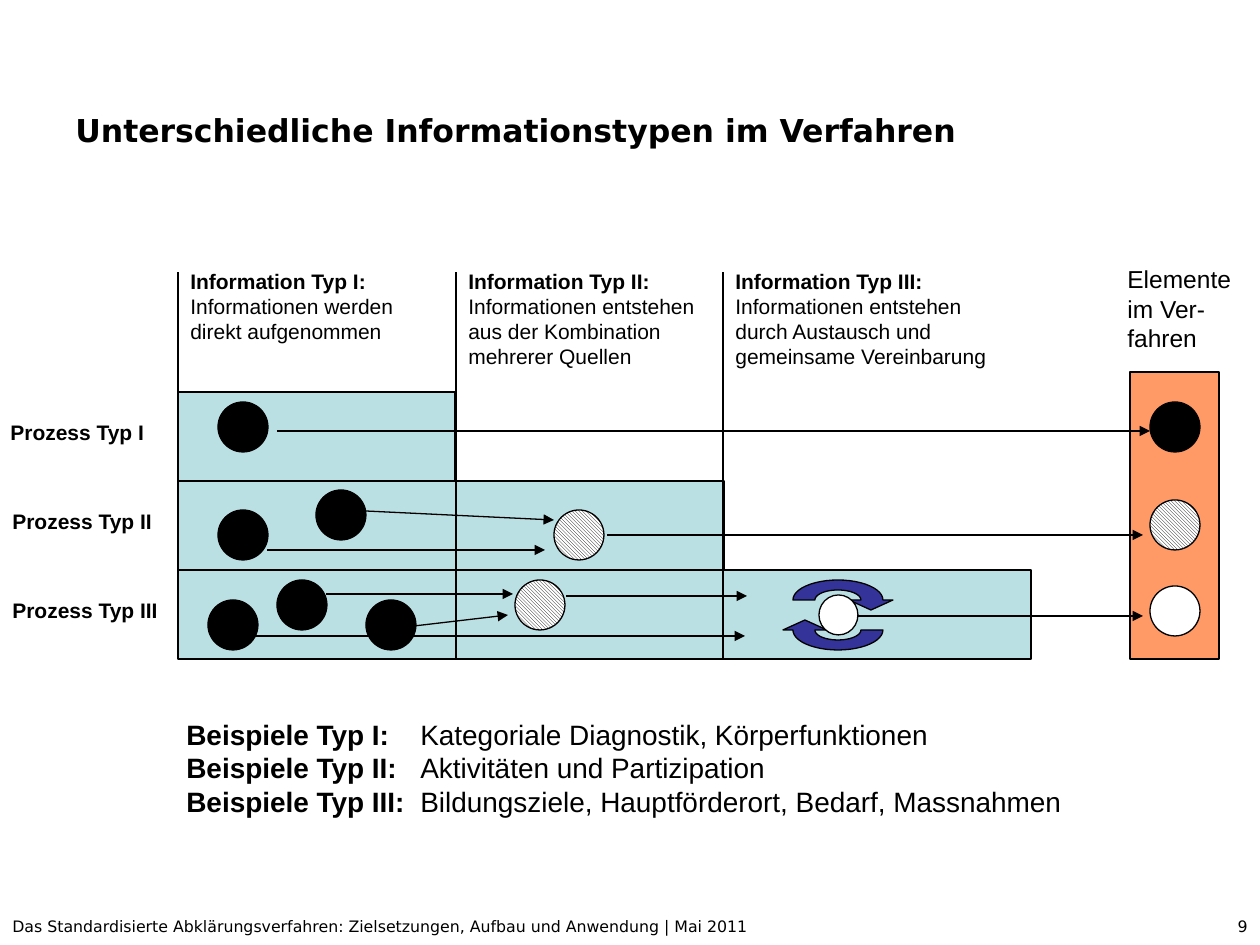
import math

import pptx
import pptx.dml.color
import pptx.enum.dml
import pptx.enum.shapes
import pptx.enum.text
import pptx.oxml
import pptx.oxml.ns
import pptx.util

EMU_PER_PX = 914400 / 126
COLORS = {"black": "000000", "white": "FFFFFF", "process": "BBE0E3",
          "elements": "FF9966", "exchange": "333399"}
COLUMN_LEFTS = [178, 456, 723]
ROW_TOP, ROW_HEIGHT = 392, 89
BOTTOM = ROW_TOP + 3 * ROW_HEIGHT


def px(value):
    return pptx.util.Emu(round(value * EMU_PER_PX))


def color(name):
    return pptx.dml.color.RGBColor.from_string(COLORS[name])


def write_text(frame, paragraphs, size=12, font="Arial", align="LEFT", hanging=0):
    """Fill a frame; each paragraph is a list of (text, bold), "\n" being a line break."""
    for index, pieces in enumerate(paragraphs):
        paragraph = frame.paragraphs[0] if index == 0 else frame.add_paragraph()
        paragraph.alignment = getattr(pptx.enum.text.PP_ALIGN, align)
        if hanging:
            properties = paragraph._p.get_or_add_pPr()
            properties.set("marL", str(px(hanging)))
            properties.set("indent", str(-px(hanging)))
        for text, bold in pieces:
            if text == "\n":
                paragraph.add_line_break()
                continue
            run = paragraph.add_run()
            run.text = text
            run.font.size = pptx.util.Pt(size)
            run.font.name = font
            run.font.bold = bold
            run.font.color.rgb = color("black")


class SlideBuilder:
    """Holds the line style and the slide being drawn."""

    def __init__(self, slide, line_width=0.75):
        self.slide = slide
        self.line_width = pptx.util.Pt(line_width)

    def text(self, left, top, width, height, paragraphs, **text_format):
        box = self.slide.shapes.add_textbox(px(left), px(top), px(width), px(height))
        box.text_frame.word_wrap = True
        write_text(box.text_frame, paragraphs, **text_format)

    def style(self, shape, fill):
        shape.shadow.inherit = False
        if fill == "hatched":
            shape.fill.patterned()
            shape.fill.pattern = pptx.enum.dml.MSO_PATTERN.DARK_DOWNWARD_DIAGONAL
            shape.fill.fore_color.rgb = color("black")
            shape.fill.back_color.rgb = color("white")
        else:
            shape.fill.solid()
            shape.fill.fore_color.rgb = color(fill)
        self.outline(shape)

    def outline(self, shape):
        shape.line.color.rgb = color("black")
        shape.line.width = self.line_width

    def shape(self, kind, left, top, width, height, fill):
        preset = getattr(pptx.enum.shapes.MSO_SHAPE, kind)
        shape = self.slide.shapes.add_shape(
            preset, px(left), px(top), px(width), px(height))
        self.style(shape, fill)

    def rectangle(self, left, top, width, height, fill):
        self.shape("RECTANGLE", left, top, width, height, fill)

    def circle(self, left, top, fill, width=50, height=50):
        self.shape("OVAL", left, top, width, height, fill)

    def line(self, x1, y1, x2, y2, arrow=False):
        connector = self.slide.shapes.add_connector(
            pptx.enum.shapes.MSO_CONNECTOR.STRAIGHT, px(x1), px(y1), px(x2), px(y2))
        self.outline(connector)
        if arrow:
            tail = pptx.oxml.parse_xml(
                f'<a:tailEnd {pptx.oxml.ns.nsdecls("a")} type="triangle"/>')
            connector.line._get_or_add_ln().append(tail)
        connector._element.spPr.append(
            pptx.oxml.parse_xml(f'<a:effectLst {pptx.oxml.ns.nsdecls("a")}/>'))

    def curved_arrow(self, center, base, direction, fill):
        """Half ring with a head; direction 1 arches up, -1 is turned by 180 degrees."""
        angles = [math.pi * step / 24 for step in range(25)]
        inner = [(23 * math.cos(a), -10 * math.sin(a)) for a in angles]
        outer = [(-45 * math.cos(a), -20 * math.sin(a)) for a in angles]
        head = [(55, 0), (33, 10), (11, 0)]
        points = [(px(center + direction * x), px(base + direction * y))
                  for x, y in inner + outer + head]
        builder = self.slide.shapes.build_freeform(*points[0], scale=1.0)
        builder.add_line_segments(points[1:], close=True)
        self.style(builder.convert_to_shape(), fill)


def main():
    presentation = pptx.Presentation()
    presentation.slide_width = px(1260)
    presentation.slide_height = px(945)
    builder = SlideBuilder(presentation.slides.add_slide(presentation.slide_layouts[6]))

    builder.text(769, 911, 491, 32, [[("9", False)]],
                 size=9, font="DejaVu Sans", align="RIGHT")
    builder.text(0, 911, 1018, 32, [[(
        "Das Standardisierte Abklärungsverfahren: Zielsetzungen, Aufbau und Anwendung"
        " | Mai 2011", False)]], size=9, font="DejaVu Sans")
    builder.text(63, 105, 1071, 50,
                 [[("Unterschiedliche Informationstypen im Verfahren", True)]],
                 size=18, font="DejaVu Sans")

    for row, width in enumerate([277, 546, 853]):
        builder.rectangle(COLUMN_LEFTS[0], ROW_TOP + row * ROW_HEIGHT,
                          width, ROW_HEIGHT, "process")
    builder.rectangle(1130, 372, 89, 287, "elements")
    for left, bottom in zip(COLUMN_LEFTS, [ROW_TOP, BOTTOM, BOTTOM]):
        builder.line(left, bottom, left, 272)

    types = [
        ("I", "Informationen werden direkt aufgenommen",
         "Kategoriale Diagnostik, Körperfunktionen"),
        ("II", "Informationen entstehen aus der Kombination mehrerer Quellen",
         "Aktivitäten und Partizipation"),
        ("III", "Informationen entstehen durch Austausch und gemeinsame Vereinbarung",
         "Bildungsziele, Hauptförderort, Bedarf, Massnahmen"),
    ]
    label_lefts = [-2, 0, 0]
    for row, (number, description, _) in enumerate(types):
        builder.text(COLUMN_LEFTS[row], 262, 277, 115,
                     [[(f"Information Typ {number}:", True)], [(description, False)]])
        builder.text(label_lefts[row], 413 + row * ROW_HEIGHT, 189, 38,
                     [[(f"Prozess Typ {number}", True)]])
    builder.text(174, 711, 946, 113,
                 [[(f"Beispiele Typ {number}:\t", True), (examples, False)]
                  for number, _, examples in types], size=16, hanging=234)
    builder.text(1115, 258, 140, 101,
                 [[("Elemente im Ver-", False), ("\n", False), ("fahren", False)]],
                 size=14)

    circles = {
        "black": [(218, 402), (1150, 402), (316, 490), (218, 510),
                  (366, 600), (277, 580), (208, 600)],
        "hatched": [(554, 510), (515, 580), (1150, 500)],
        "white": [(1150, 586)],
    }
    for fill, places in circles.items():
        for left, top in places:
            builder.circle(left, top, fill)
    builder.curved_arrow(838, 600, 1, "exchange")
    builder.curved_arrow(838, 630, -1, "exchange")
    builder.circle(819, 595, "white", 39, 40)

    arrows = [
        (277, 431, 1150, 431), (366, 511, 554, 520), (267, 550, 545, 550),
        (607, 535, 1143, 535), (326, 594, 513, 594), (255, 636, 745, 636),
        (414, 626, 508, 615), (566, 596, 747, 596), (857, 616, 1143, 616),
    ]
    for ends in arrows:
        builder.line(*ends, arrow=True)

    presentation.save("out.pptx")


if __name__ == "__main__":
    main()
